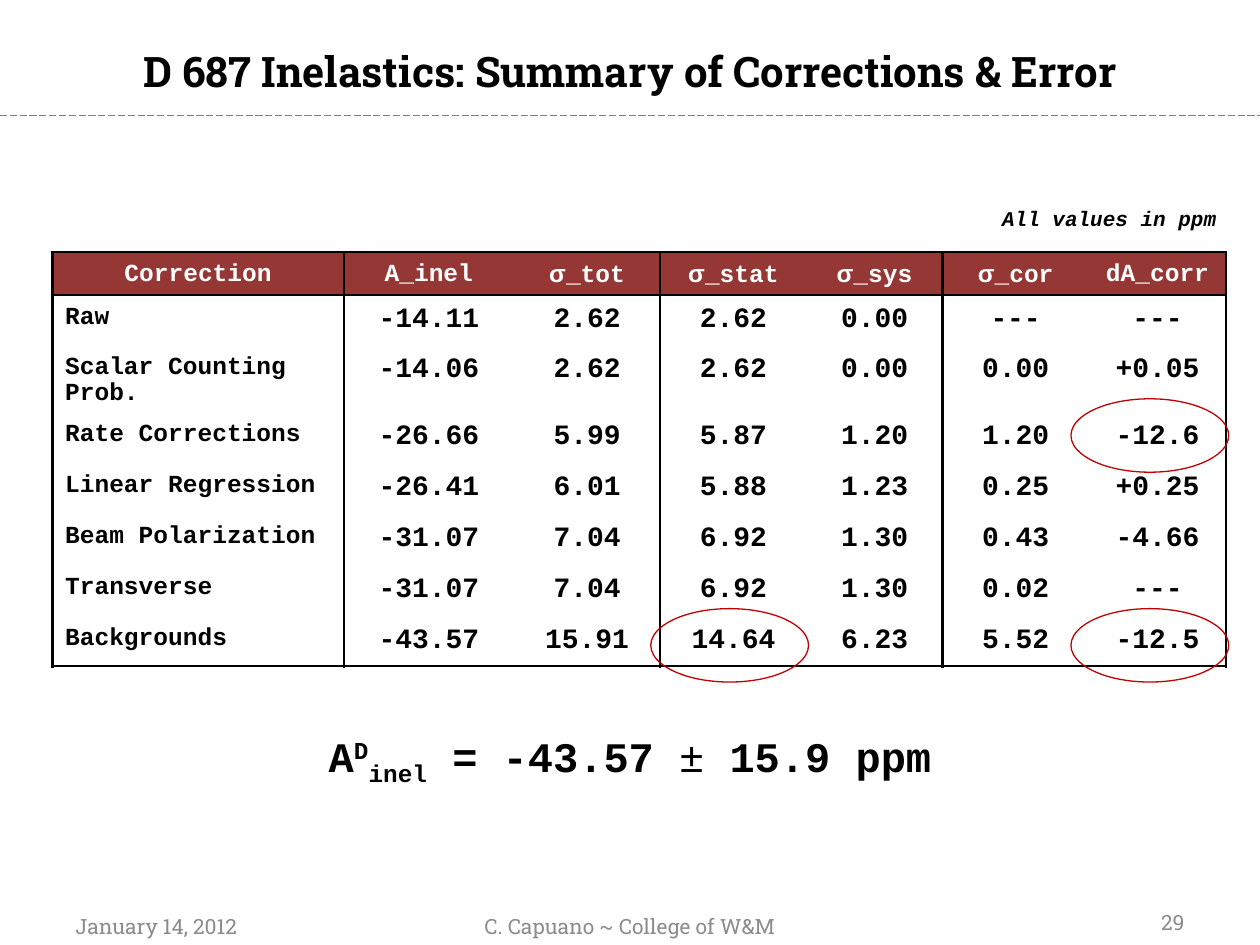
"""Builds the slide that summarises the inelastic asymmetry corrections."""
from lxml.etree import SubElement
from pptx import Presentation
from pptx.dml.color import RGBColor
from pptx.enum.dml import MSO_LINE
from pptx.enum.shapes import MSO_CONNECTOR, MSO_SHAPE
from pptx.enum.text import MSO_ANCHOR, MSO_AUTO_SIZE, PP_ALIGN
from pptx.oxml.ns import qn
from pptx.util import Cm, Pt

BLACK = RGBColor(0x00, 0x00, 0x00)
WHITE = RGBColor(0xFF, 0xFF, 0xFF)
MAROON = RGBColor(0x95, 0x37, 0x35)
RED = RGBColor(0xC0, 0x00, 0x00)
GRAY = RGBColor(0x80, 0x80, 0x80)
FOOTER_GRAY = RGBColor(0x8C, 0x8C, 0x8C)

SERIF, MONO, SYMBOL = "Roboto Slab", "Courier New", "Arial"

TITLE = {"name": SERIF, "size": Pt(24), "bold": True, "color": BLACK}
FOOTER = {"name": SERIF, "size": Pt(12), "bold": False, "color": FOOTER_GRAY}
LABEL = {"name": MONO, "size": Pt(14), "bold": True, "color": BLACK}
HEADING = {**LABEL, "color": WHITE}
VALUE = {**LABEL, "size": Pt(16)}
UNITS = {**LABEL, "size": Pt(12), "italic": True}
RESULT = {**LABEL, "size": Pt(24)}

HEADINGS = ["Correction", "A_inel", "σ_tot", "σ_stat", "σ_sys", "σ_cor", "dA_corr"]
CORRECTIONS = [
    ["Raw", "-14.11", "2.62", "2.62", "0.00", "---", "---"],
    ["Scalar Counting Prob.", "-14.06", "2.62", "2.62", "0.00", "0.00", "+0.05"],
    ["Rate Corrections", "-26.66", "5.99", "5.87", "1.20", "1.20", "-12.6"],
    ["Linear Regression", "-26.41", "6.01", "5.88", "1.23", "0.25", "+0.25"],
    ["Beam Polarization", "-31.07", "7.04", "6.92", "1.30", "0.43", "-4.66"],
    ["Transverse", "-31.07", "7.04", "6.92", "1.30", "0.02", "---"],
    ["Backgrounds", "-43.57", "15.91", "14.64", "6.23", "5.52", "-12.5"],
]
COLUMN_WIDTHS = [5.87, 3.43, 2.95, 2.95, 2.74, 2.95, 2.77]
ROW_HEIGHTS = [0.86, 1.02, 1.35, 1.02, 1.04, 1.02, 1.02, 1.02]
GROUP_STARTS, GROUP_ENDS = {0, 1, 3, 5}, {0, 2, 4, 6}


class SlideBuilder:
    """Holds the slide and adds styled elements to it."""

    def __init__(self, slide):
        self.slide = slide

    def add_runs(self, paragraph, pieces, style, align):
        """Fills a paragraph with runs, each a text and its changes to the style."""
        paragraph.alignment = align
        for text, changes in pieces:
            run = paragraph.add_run()
            run.text = text
            for key, value in {**style, **changes}.items():
                if key == "color":
                    run.font.color.rgb = value
                elif key == "baseline":
                    run._r.get_or_add_rPr().set("baseline", str(value))
                else:
                    setattr(run.font, key, value)

    def title(self, text, left, top, width, height):
        """Moves and fills the title placeholder."""
        title = self.slide.shapes.title
        title.left, title.top = Cm(left), Cm(top)
        title.width, title.height = Cm(width), Cm(height)
        title.text_frame.vertical_anchor = MSO_ANCHOR.MIDDLE
        self.add_runs(title.text_frame.paragraphs[0], [(text, {})], TITLE, PP_ALIGN.CENTER)

    def text(self, pieces, box, style, align, **frame_format):
        """Adds a wrapping text box."""
        frame = self.slide.shapes.add_textbox(*map(Cm, box)).text_frame
        for key, value in {"word_wrap": True, **frame_format}.items():
            setattr(frame, key, value)
        self.add_runs(frame.paragraphs[0], pieces, style, align)

    def rule(self, y, width):
        """Adds the dashed line below the title."""
        rule = self.slide.shapes.add_connector(
            MSO_CONNECTOR.STRAIGHT, 0, Cm(y), Cm(width), Cm(y))
        rule.line.color.rgb = GRAY
        rule.line.width = Pt(0.5)
        rule.line.dash_style = MSO_LINE.LONG_DASH
        SubElement(rule._element.spPr, qn("a:effectLst"))

    def ring(self, left, top):
        """Adds an open ellipse around a table value."""
        ring = self.slide.shapes.add_shape(
            MSO_SHAPE.OVAL, Cm(left), Cm(top), Cm(3.18), Cm(1.48))
        ring.shadow.inherit = False
        ring.fill.background()
        ring.line.color.rgb = RED
        ring.line.width = Pt(0.75)

    def borders(self, cell, sides):
        """Draws each side that is true and clears the others."""
        properties = cell._tc.get_or_add_tcPr()
        for side, drawn in sides.items():
            edge = SubElement(properties, qn(f"a:ln{side}"), w=str(Pt(1.5)))
            if drawn:
                fill = SubElement(edge, qn("a:solidFill"))
                SubElement(fill, qn("a:srgbClr"), val=str(BLACK))
            else:
                SubElement(edge, qn("a:noFill"))

    def table(self, rows, left, top):
        """Adds the corrections table with its grouped columns."""
        table = self.slide.shapes.add_table(
            len(rows), len(COLUMN_WIDTHS), Cm(left), Cm(top),
            Cm(sum(COLUMN_WIDTHS)), Cm(sum(ROW_HEIGHTS))).table
        table.first_row = table.horz_banding = False
        for column, width in zip(table.columns, COLUMN_WIDTHS):
            column.width = Cm(width)
        for row, height in zip(table.rows, ROW_HEIGHTS):
            row.height = Cm(height)
        for r, row in enumerate(rows):
            for c, text in enumerate(row):
                self.cell(table.cell(r, c), text, r, c, r == len(rows) - 1)

    def cell(self, cell, text, r, c, is_last):
        """Fills and formats one table cell."""
        cell.margin_top = Cm(0.18)
        self.borders(cell, {"L": c in GROUP_STARTS, "R": c in GROUP_ENDS,
                            "T": r in (0, 1), "B": r == 0 or is_last})
        if r == 0:
            style = HEADING
            cell.fill.solid()
            cell.fill.fore_color.rgb = MAROON
        else:
            style = VALUE if c else LABEL
            cell.fill.background()
        pieces = [(text, {})]
        if text.startswith("σ"):
            pieces = [("σ", {"name": SYMBOL}), (text[1:], {})]
        paragraph = cell.text_frame.paragraphs[0]
        paragraph.line_spacing = 0.93
        align = PP_ALIGN.LEFT if r and not c else PP_ALIGN.CENTER
        self.add_runs(paragraph, pieces, style, align)


def main():
    """Builds and saves the slide."""
    deck = Presentation()
    deck.slide_width, deck.slide_height = Cm(25.4), Cm(19.05)
    builder = SlideBuilder(deck.slides.add_slide(deck.slide_layouts[5]))

    builder.rule(2.33, 25.4)
    builder.title("D 687 Inelastics: Summary of Corrections & Error", 1.27, 0.64, 22.86, 1.57)
    builder.table([HEADINGS, *CORRECTIONS], 1.06, 5.08)

    result = [("A", {}), ("D", {"baseline": 30000}), ("inel", {"baseline": -25000}),
              (" = -43.57 ", {}), ("±", {"bold": False}), (" 15.9 ppm", {})]
    grow = {"auto_size": MSO_AUTO_SIZE.SHAPE_TO_FIT_TEXT}
    builder.text(result, (0, 14.6, 25.4, 1.27), RESULT, PP_ALIGN.CENTER, **grow)
    builder.text([("All values in ppm", {})], (15.67, 4.02, 9.1, 0.76),
                 UNITS, PP_ALIGN.RIGHT, **grow)

    for left, top in [(13.12, 12.27), (21.59, 8.04), (21.59, 12.27)]:
        builder.ring(left, top)

    for text, left, top, width, align in [
        ("January 14, 2012", 1.27, 18.03, 5.93, PP_ALIGN.LEFT),
        ("C. Capuano ~ College of W&M", 8.68, 18.03, 8.04, PP_ALIGN.CENTER),
        ("29", 18.2, 17.95, 5.93, PP_ALIGN.RIGHT),
    ]:
        builder.text([(text, {})], (left, top, width, 1.02), FOOTER, align,
                     vertical_anchor=MSO_ANCHOR.BOTTOM)

    deck.save("out.pptx")


if __name__ == "__main__":
    main()
